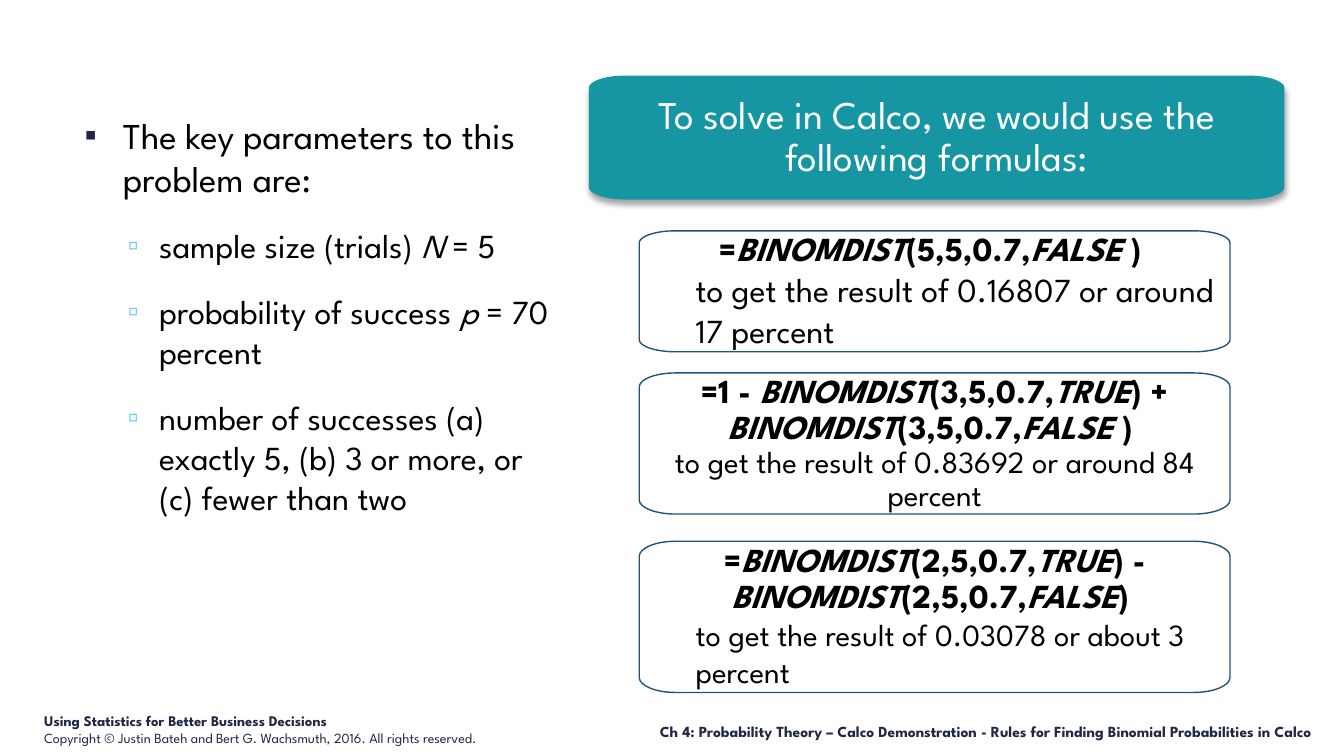
from lxml import etree
from pptx import Presentation
from pptx.dml.color import RGBColor
from pptx.enum.text import MSO_ANCHOR, PP_ALIGN
from pptx.oxml.ns import qn
from pptx.util import Inches, Pt

LEFT, CENTER, RIGHT = PP_ALIGN.LEFT, PP_ALIGN.CENTER, PP_ALIGN.RIGHT
TOP, MIDDLE, BOTTOM = MSO_ANCHOR.TOP, MSO_ANCHOR.MIDDLE, MSO_ANCHOR.BOTTOM

FONT = "League Spartan"
COLORS = {
    "navy": "212745",
    "sky": "5ECCF3",
    "teal": "1696A3",
    "outline": "225479",
    "black": "000000",
    "white": "FFFFFF",
}
CORNER_WIDTH = 0.36
ARC_PULL = 0.55

# Paragraph formats: attributes of the paragraph object
CENTERED = {"alignment": CENTER, "line_spacing": 0.9}
INDENTED = {"alignment": LEFT, "level": 1}
LISTED = {"alignment": LEFT, "space_before": Pt(6), "space_after": Pt(12)}


def rgb(name):
    return RGBColor.from_string(COLORS[name])


def add_xml(parent, tag, **attributes):
    return etree.SubElement(parent, qn(tag), {k: str(v) for k, v in attributes.items()})


def round_corners(outline):
    """Turn every other segment of an eight-sided outline into a curve."""
    segments = list(outline)[:-1]
    ends = [(int(segment[0].get("x")), int(segment[0].get("y"))) for segment in segments]
    for number in range(1, len(segments), 2):
        start, end = ends[number - 1], ends[number]
        leaves_upright = number % 4 == 1
        corner = (start[0], end[1]) if leaves_upright else (end[0], start[1])
        curve = etree.Element(qn("a:cubicBezTo"))
        for anchor in (start, end):
            x, y = (round(a + ARC_PULL * (c - a)) for a, c in zip(anchor, corner))
            add_xml(curve, "a:pt", x=x, y=y)
        add_xml(curve, "a:pt", x=end[0], y=end[1])
        outline.replace(segments[number], curve)


class SlideBuilder:
    def __init__(self, slide):
        self.slide = slide

    def paragraph(self, frame, text, size, color="black", bold=False,
                  layout=None, indent=None, bullet=None):
        """Append a paragraph; parts between asterisks are italic."""
        first = frame.paragraphs[0]
        paragraph = first if not first.runs else frame.add_paragraph()
        for name, value in (layout or {}).items():
            setattr(paragraph, name, value)
        properties = paragraph._p.get_or_add_pPr()
        if indent:
            margin, hanging = indent
            properties.set("marL", str(Inches(margin)))
            properties.set("indent", str(Inches(hanging)))
        if bullet:
            symbol, bullet_color, percent = bullet
            holder = add_xml(properties, "a:buClr")
            add_xml(holder, "a:srgbClr", val=COLORS[bullet_color])
            add_xml(properties, "a:buSzPct", val=percent * 1000)
            add_xml(properties, "a:buFont", typeface="Arial")
            add_xml(properties, "a:buChar", char=symbol)
        for position, part in enumerate(text.split("*")):
            if not part:
                continue
            run = paragraph.add_run()
            run.text = part
            style = {"name": FONT, "size": Pt(size), "bold": bold,
                     "italic": position % 2 == 1}
            for name, value in style.items():
                setattr(run.font, name, value)
            run.font.color.rgb = rgb(color)

    def text_box(self, left, top, width, height, anchor=TOP):
        box = self.slide.shapes.add_textbox(*map(Inches, (left, top, width, height)))
        box.text_frame.word_wrap = True
        box.text_frame.vertical_anchor = anchor
        return box.text_frame

    def panel(self, left, top, width, height, fill, insets):
        """Add a panel with elliptical corners."""
        rx, ry = CORNER_WIDTH, height / 10
        right, bottom = left + width, top + height
        corners = [
            (left, top + ry), (left + rx, top), (right - rx, top), (right, top + ry),
            (right, bottom - ry), (right - rx, bottom), (left + rx, bottom),
            (left, bottom - ry),
        ]
        points = [(Inches(x), Inches(y)) for x, y in corners]
        builder = self.slide.shapes.build_freeform(*points[0])
        builder.add_line_segments(points[1:] + points[:1], close=True)
        panel = builder.convert_to_shape()
        round_corners(next(panel._element.iter(qn("a:path"))))
        panel.shadow.inherit = False
        panel.fill.solid()
        panel.fill.fore_color.rgb = rgb(fill)
        frame = panel.text_frame
        side, end = map(Inches, insets)
        settings = {"word_wrap": True, "vertical_anchor": MIDDLE,
                    "margin_left": side, "margin_right": side,
                    "margin_top": end, "margin_bottom": end}
        for name, value in settings.items():
            setattr(frame, name, value)
        return panel

    def header(self, text):
        header = self.panel(5.84, 0.75, 6.9, 1.23, "teal", (0.07, 0.06))
        header.line.fill.background()
        effects = header._element.spPr.find(qn("a:effectLst"))
        shadow = add_xml(effects, "a:outerShdw", blurRad=Pt(4), dist=Pt(3),
                         dir=90 * 60000, rotWithShape=0)
        shade = add_xml(shadow, "a:srgbClr", val=COLORS["black"])
        add_xml(shade, "a:alpha", val=35000)
        self.paragraph(header.text_frame, text, 28, "white", layout=CENTERED)

    def formula_card(self, top, height, formula, result, result_size, layout):
        card = self.panel(6.34, top, 5.86, height, "white", (0.06, 0.05))
        fill_color = card._element.spPr.find(qn("a:solidFill"))[0]
        add_xml(fill_color, "a:alpha", val=90000)
        card.line.color.rgb = rgb("outline")
        card.line.width = Pt(1)
        self.paragraph(card.text_frame, formula, 24, bold=True, layout=CENTERED)
        self.paragraph(card.text_frame, result, result_size, layout=layout,
                       indent=(0.5, 0) if layout is INDENTED else None)


def main():
    deck = Presentation()
    deck.slide_width, deck.slide_height = Inches(13.33), Inches(7.5)
    page = SlideBuilder(deck.slides.add_slide(deck.slide_layouts[6]))

    credit = page.text_box(0.34, 7.01, 5.28, 0.4)
    page.paragraph(credit, "Using Statistics for Better Business Decisions",
                   10.5, "navy", bold=True)
    page.paragraph(credit, "Copyright © Justin Bateh and Bert G. Wachsmuth, 2016. "
                   "All rights reserved.", 10, "navy", layout={"space_after": Pt(1)})

    parameters = page.text_box(0.67, 1.07, 4.98, 5.5)
    page.paragraph(parameters, "The key parameters to this problem are:", 26,
                   layout=LISTED, indent=(0.45, -0.38), bullet=("▪", "navy", 95))
    for parameter in (
        "sample size (trials) *N *= 5",
        "probability of success *p *= 70 percent",
        "number of successes (a) exactly 5, (b) 3 or more, or (c) fewer than two",
    ):
        page.paragraph(parameters, parameter, 24, layout={**LISTED, "level": 1},
                       indent=(0.81, -0.31), bullet=("▫", "sky", 90))

    chapter = page.text_box(5.84, 7.11, 7.28, 0.29, anchor=BOTTOM)
    page.paragraph(chapter, "Ch 4: Probability Theory – Calco Demonstration - "
                   "Rules for Finding Binomial Probabilities in Calco",
                   11, "navy", bold=True, layout={"alignment": RIGHT})

    page.header("To solve in Calco, we would use the following formulas:")
    cards = [
        (2.29, 1.2, "=*BINOMDIST*(5,5,0.7,*FALSE *) ",
         "to get the result of 0.16807 or around 17 percent", 24, INDENTED),
        (3.7, 1.4, "=1 - *BINOMDIST*(3,5,0.7,*TRUE*) + *BINOMDIST*(3,5,0.7,*FALSE *) ",
         "to get the result of 0.83692 or around 84 percent", 22, CENTERED),
        (5.37, 1.5, "=*BINOMDIST*(2,5,0.7,*TRUE*) - *BINOMDIST*(2,5,0.7,*FALSE*) ",
         "to get the result of 0.03078 or about 3 percent", 22, INDENTED),
    ]
    for card in cards:
        page.formula_card(*card)

    deck.save("out.pptx")


if __name__ == "__main__":
    main()
